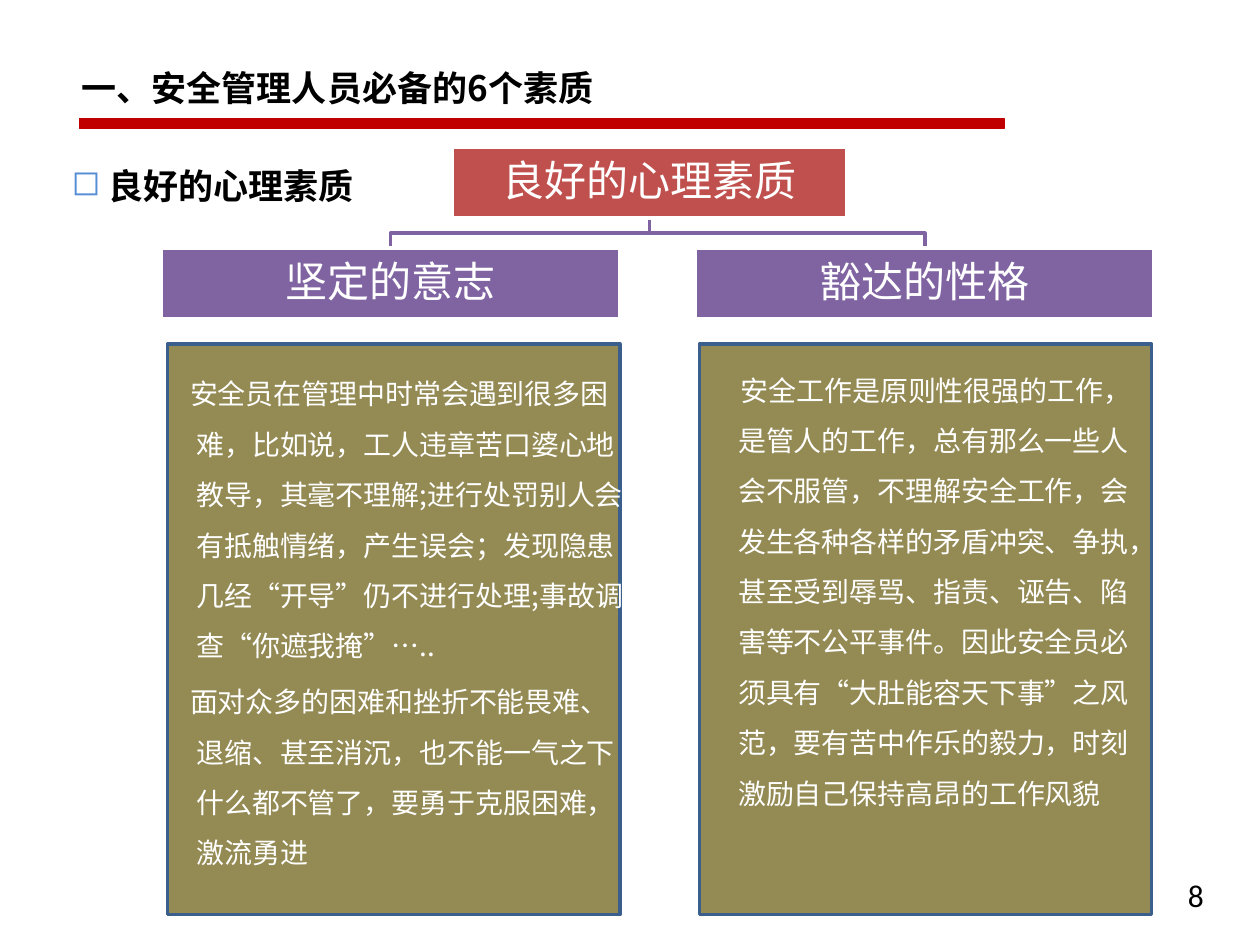
from dataclasses import dataclass
from lxml.etree import SubElement
from pptx import Presentation
from pptx.dml.color import RGBColor
from pptx.enum.shapes import MSO_SHAPE
from pptx.enum.text import MSO_ANCHOR, PP_ALIGN
from pptx.oxml.ns import qn
from pptx.util import Inches, Pt


@dataclass(frozen=True)
class Theme:
    latin: str = "Calibri"
    chinese: str = "Noto Sans CJK SC"
    black: str = "000000"
    white: str = "FFFFFF"
    rule: str = "C00000"
    root: str = "C0504D"
    branch: str = "8064A2"
    panel: str = "948A54"
    panel_line: str = "3A5F8C"
    bullet: str = "558ED5"
    title_size: int = 20
    heading_size: int = 24
    body_size: int = 16
    number_size: int = 18


class SlideBuilder:
    def __init__(self, slide, theme):
        self.slide = slide
        self.theme = theme

    def style_runs(self, paragraph, font_name, size, color, bold=False):
        for run in paragraph.runs:
            run.font.name = font_name
            run.font.size = Pt(size)
            run.font.bold = bold
            run.font.color.rgb = RGBColor.from_string(color)
            east_asian = SubElement(run.font._element, qn("a:ea"))
            east_asian.set("typeface", self.theme.chinese)

    def rectangle(self, left, top, width, height, fill, line, line_width):
        shape = self.slide.shapes.add_shape(
            MSO_SHAPE.RECTANGLE, Inches(left), Inches(top), Inches(width), Inches(height))
        shape.shadow.inherit = False
        shape.fill.solid()
        shape.fill.fore_color.rgb = RGBColor.from_string(fill)
        shape.line.color.rgb = RGBColor.from_string(line)
        shape.line.width = Pt(line_width)
        return shape

    def heading(self, left, top, width, height, text, fill):
        shape = self.rectangle(left, top, width, height, fill, self.theme.white, 2)
        frame = shape.text_frame
        frame.text = text
        frame.word_wrap = True
        frame.vertical_anchor = MSO_ANCHOR.MIDDLE
        frame.margin_left = frame.margin_right = Inches(0.02)
        frame.margin_top = frame.margin_bottom = Inches(0.02)
        paragraph = frame.paragraphs[0]
        paragraph.alignment = PP_ALIGN.CENTER
        paragraph.line_spacing = 0.9
        self.style_runs(paragraph, self.theme.latin, self.theme.heading_size, self.theme.white)

    def text_box(self, left, top, width, height, text, size, color, bold=False,
                 font_name=None, margin=0.29, indent=-0.29, spacing=1.5, bullet=None):
        shape = self.slide.shapes.add_textbox(
            Inches(left), Inches(top), Inches(width), Inches(height))
        frame = shape.text_frame
        frame.word_wrap = True
        frame.text = text
        for paragraph in frame.paragraphs:
            paragraph.line_spacing = spacing
            paragraph.space_before = Pt(size * 0.2)
            properties = paragraph._p.get_or_add_pPr()
            properties.set("marL", str(Inches(margin)))
            properties.set("indent", str(Inches(indent)))
            if bullet:
                bullet_color = SubElement(properties, qn("a:buClr"))
                SubElement(bullet_color, qn("a:srgbClr")).set("val", self.theme.bullet)
                SubElement(properties, qn("a:buChar")).set("char", bullet)
            self.style_runs(paragraph, font_name or self.theme.chinese, size, color, bold)

    def elbow(self, start_x, start_y, end_x, end_y, middle_y):
        builder = self.slide.shapes.build_freeform(Inches(start_x), Inches(start_y))
        points = [(start_x, middle_y), (end_x, middle_y), (end_x, end_y)]
        builder.add_line_segments([(Inches(x), Inches(y)) for x, y in points], close=False)
        shape = builder.convert_to_shape()
        shape.shadow.inherit = False
        shape.fill.background()
        shape.line.color.rgb = RGBColor.from_string(self.theme.branch)
        shape.line.width = Pt(2)


WILL = (
    "安全员在管理中时常会遇到很多困难，比如说，工人违章苦口婆心地教导，其毫不理解;"
    "进行处罚别人会有抵触情绪，产生误会；发现隐患几经“开导”仍不进行处理;"
    "事故调查“你遮我掩”…..\n"
    "面对众多的困难和挫折不能畏难、退缩、甚至消沉，也不能一气之下什么都不管了，"
    "要勇于克服困难，激流勇进"
)
CHARACTER = (
    "安全工作是原则性很强的工作，是管人的工作，总有那么一些人会不服管，不理解安全工作，"
    "会发生各种各样的矛盾冲突、争执，甚至受到辱骂、指责、诬告、陷害等不公平事件。"
    "因此安全员必须具有“大肚能容天下事”之风范，要有苦中作乐的毅力，"
    "时刻激励自己保持高昂的工作风貌"
)


def main():
    presentation = Presentation()
    presentation.slide_width = Inches(10)
    presentation.slide_height = Inches(7.5)
    slide = presentation.slides.add_slide(presentation.slide_layouts[6])
    theme = Theme()
    builder = SlideBuilder(slide, theme)

    builder.text_box(9.33, 6.9, 0.63, 0.4, "8", theme.number_size, theme.black,
                     font_name=theme.latin, margin=0, indent=0, spacing=1)
    builder.rectangle(0.63, 0.94, 7.34, 0.08, theme.rule, theme.rule, 0.75)
    builder.text_box(0.55, 0.31, 5.77, 0.55, "一、安全管理人员必备的6个素质",
                     theme.title_size, theme.black, bold=True)
    builder.text_box(0.47, 1.09, 5.63, 0.86, "良好的心理素质",
                     theme.title_size, theme.black, bold=True, bullet="◻")

    for panel_left in (1.33, 5.55):
        builder.rectangle(panel_left, 2.73, 3.59, 4.53, theme.panel, theme.panel_line, 2)
    builder.text_box(1.17, 2.81, 3.91, 4.61, WILL, theme.body_size, theme.white, indent=-0.05)
    builder.text_box(5.47, 2.78, 3.67, 4.45, CHARACTER, theme.body_size, theme.white, indent=0.02)

    root_left, root_width, branch_width, heading_height = 3.59, 3.13, 3.64, 0.56
    root_center = root_left + root_width / 2
    branches = [(1.28, "坚定的意志"), (5.52, "豁达的性格")]
    for branch_left, _ in branches:
        builder.elbow(root_center, 1.74, branch_left + branch_width / 2, 1.97, 1.85)
    builder.heading(root_left, 1.17, root_width, heading_height, "良好的心理素质", theme.root)
    for branch_left, text in branches:
        builder.heading(branch_left, 1.97, branch_width, heading_height, text, theme.branch)

    presentation.save("out.pptx")


if __name__ == "__main__":
    main()
